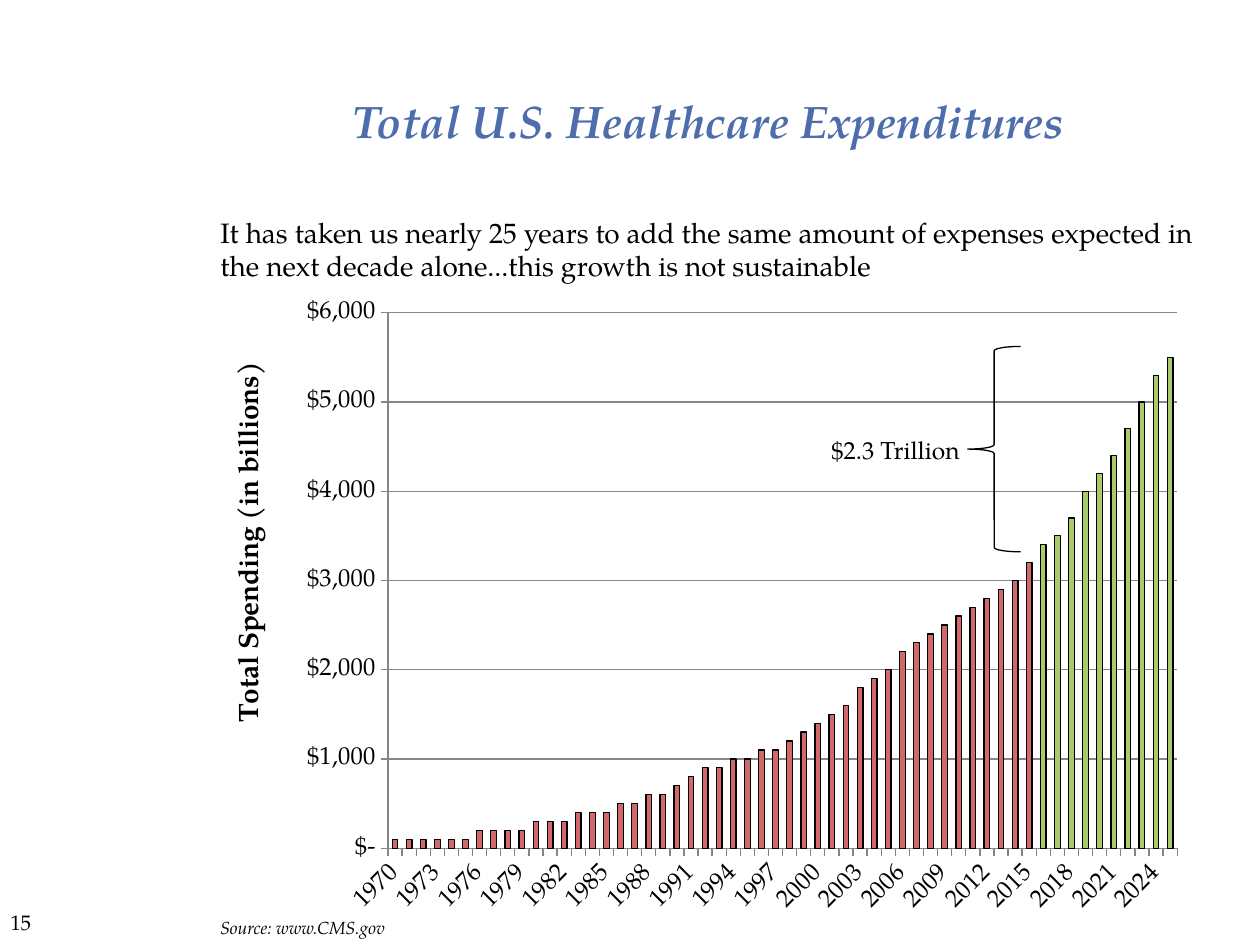
from lxml import etree
from pptx import Presentation
from pptx.chart.data import CategoryChartData
from pptx.dml.color import RGBColor
from pptx.enum.chart import XL_CHART_TYPE as ChartType, XL_TICK_MARK as TickMark
from pptx.enum.shapes import MSO_SHAPE as Preset
from pptx.enum.text import MSO_ANCHOR as Anchor, PP_ALIGN as Align
from pptx.oxml import parse_xml
from pptx.oxml.ns import nsdecls, qn
from pptx.util import Inches, Pt

FONT = "TeX Gyre Pagella"
BLACK = RGBColor(0x00, 0x00, 0x00)
GRAY = RGBColor(0x86, 0x86, 0x86)
BLUE = RGBColor(0x4D, 0x6D, 0xAC)
RED = RGBColor(0xD0, 0x68, 0x6C)
GREEN = RGBColor(0xAA, 0xCB, 0x69)

FIRST_YEAR, FIRST_PROJECTED = 1970, 2016
SPENDING = [
    100, 100, 100, 100, 100, 100, 200, 200, 200, 200,
    300, 300, 300, 400, 400, 400, 500, 500, 600, 600,
    700, 800, 900, 900, 1000, 1000, 1100, 1100, 1200, 1300,
    1400, 1500, 1600, 1800, 1900, 2000, 2200, 2300, 2400, 2500,
    2600, 2700, 2800, 2900, 3000, 3200, 3400, 3500, 3700, 4000,
    4200, 4400, 4700, 5000, 5300, 5500,
]


def style_font(font, size, color=BLACK, bold=False, italic=False):
    font.name, font.size = FONT, Pt(size)
    font.bold, font.italic = bold, italic
    font.color.rgb = color


def add_text(slide, box, text, size, align=Align.LEFT, anchor=Anchor.TOP, **style):
    shape = slide.shapes.add_textbox(*map(Inches, box))
    frame = shape.text_frame
    frame.word_wrap = True
    frame.vertical_anchor = anchor
    paragraph = frame.paragraphs[0]
    paragraph.alignment = align
    run = paragraph.add_run()
    run.text = text
    style_font(run.font, size, **style)


def manual_layout(x, y, width=None, height=None):
    """Chart layout in fractions of the chart's size."""
    layout = etree.Element(qn("c:layout"))
    manual = etree.SubElement(layout, qn("c:manualLayout"))
    values = {"xMode": "edge", "yMode": "edge", "x": x, "y": y}
    if width is not None:
        values = {"layoutTarget": "inner", **values, "w": width, "h": height}
    for name, value in values.items():
        etree.SubElement(manual, qn("c:" + name)).set("val", str(value))
    return layout


def replace_layout(parent, layout, position):
    for old in parent.findall(qn("c:layout")):
        parent.remove(old)
    parent.insert(position, layout)


def style_axis(axis):
    axis.major_tick_mark = TickMark.OUTSIDE
    axis.minor_tick_mark = TickMark.NONE
    axis.format.line.color.rgb = GRAY
    style_font(axis.tick_labels.font, 14)


def add_spending_chart(slide, box):
    data = CategoryChartData()
    data.categories = [str(FIRST_YEAR + i) for i in range(len(SPENDING))]
    data.add_series("Total Spending", SPENDING)
    chart = slide.shapes.add_chart(
        ChartType.COLUMN_CLUSTERED, *map(Inches, box), data).chart
    chart.has_legend = chart.has_title = False
    chart.font.name, chart.font.size = "Cambria", Pt(18)
    replace_layout(chart.plots[0]._element.getparent(),
                   manual_layout(0.18, 0.04, 0.8, 0.84), 0)

    # Year axis: every third label, slanted
    years = chart.category_axis
    style_axis(years)
    years.tick_labels._element.find(qn("c:txPr")).find(qn("a:bodyPr")).set("rot", "-2700000")
    skip = parse_xml(f'<c:tickLblSkip {nsdecls("c")} val="3"/>')
    years._element.find(qn("c:noMultiLvlLbl")).addprevious(skip)

    # Dollar axis
    dollars = chart.value_axis
    style_axis(dollars)
    dollars.minimum_scale, dollars.maximum_scale = 0, 6000
    dollars.major_unit = 1000
    dollars.major_gridlines.format.line.color.rgb = GRAY
    dollars.tick_labels.number_format = '"$"#,##0;("$"#,##0);"$-"'
    dollars.tick_labels.number_format_is_linked = False
    title = dollars.axis_title
    run = title.text_frame.paragraphs[0].add_run()
    run.text = "Total Spending (in billions)"
    style_font(run.font, 16, bold=True)
    title.text_frame._txBody.find(qn("a:bodyPr")).set("rot", "-5400000")
    replace_layout(title._element, manual_layout(0.02, 0.11), 1)

    # Actual years in red, projected years in green
    plot = chart.plots[0]
    plot.gap_width, plot.vary_by_categories = 150, False
    series = plot.series[0]
    projected = range(FIRST_PROJECTED - FIRST_YEAR, len(SPENDING))
    bars = [(series, RED)] + [(series.points[i], GREEN) for i in projected]
    for bar, color in bars:
        bar.format.fill.solid()
        bar.format.fill.fore_color.rgb = color
        bar.format.line.color.rgb = BLACK
        bar.format.line.width = Pt(0.75)


def add_growth_callout(slide, left, top):
    brace = slide.shapes.add_shape(Preset.LEFT_BRACE, Inches(left + 1.18),
                                   Inches(top), Inches(0.42), Inches(1.63))
    brace.shadow.inherit = False
    brace.fill.background()
    brace.line.color.rgb = BLACK
    brace.line.width = Pt(0.75)
    add_text(slide, (left, top + 0.65, 1.33, 0.34), "$2.3 Trillion", 14)


def main():
    presentation = Presentation()
    presentation.slide_width, presentation.slide_height = Inches(10), Inches(7.5)
    slide = presentation.slides.add_slide(presentation.slide_layouts[6])

    # Heading and message
    add_text(slide, (1.25, 0.33, 8.75, 1.25), "Total U.S. Healthcare Expenditures", 26,
             Align.CENTER, Anchor.MIDDLE, color=BLUE, bold=True, italic=True)
    add_text(slide, (1.65, 1.66, 8.02, 0.6),
             "It has taken us nearly 25 years to add the same amount of expenses "
             "expected in the next decade alone...this growth is not sustainable", 16)

    # Chart with callout
    add_spending_chart(slide, (1.67, 2.28, 7.83, 5.06))
    add_growth_callout(slide, 6.5, 2.75)

    # Footer
    add_text(slide, (1.65, 7.23, 1.93, 0.27), "Source: www.CMS.gov", 10, italic=True)
    add_text(slide, (-0.25, 7.17, 0.83, 0.5), "15", 12, Align.CENTER)

    presentation.save("out.pptx")


if __name__ == "__main__":
    main()
